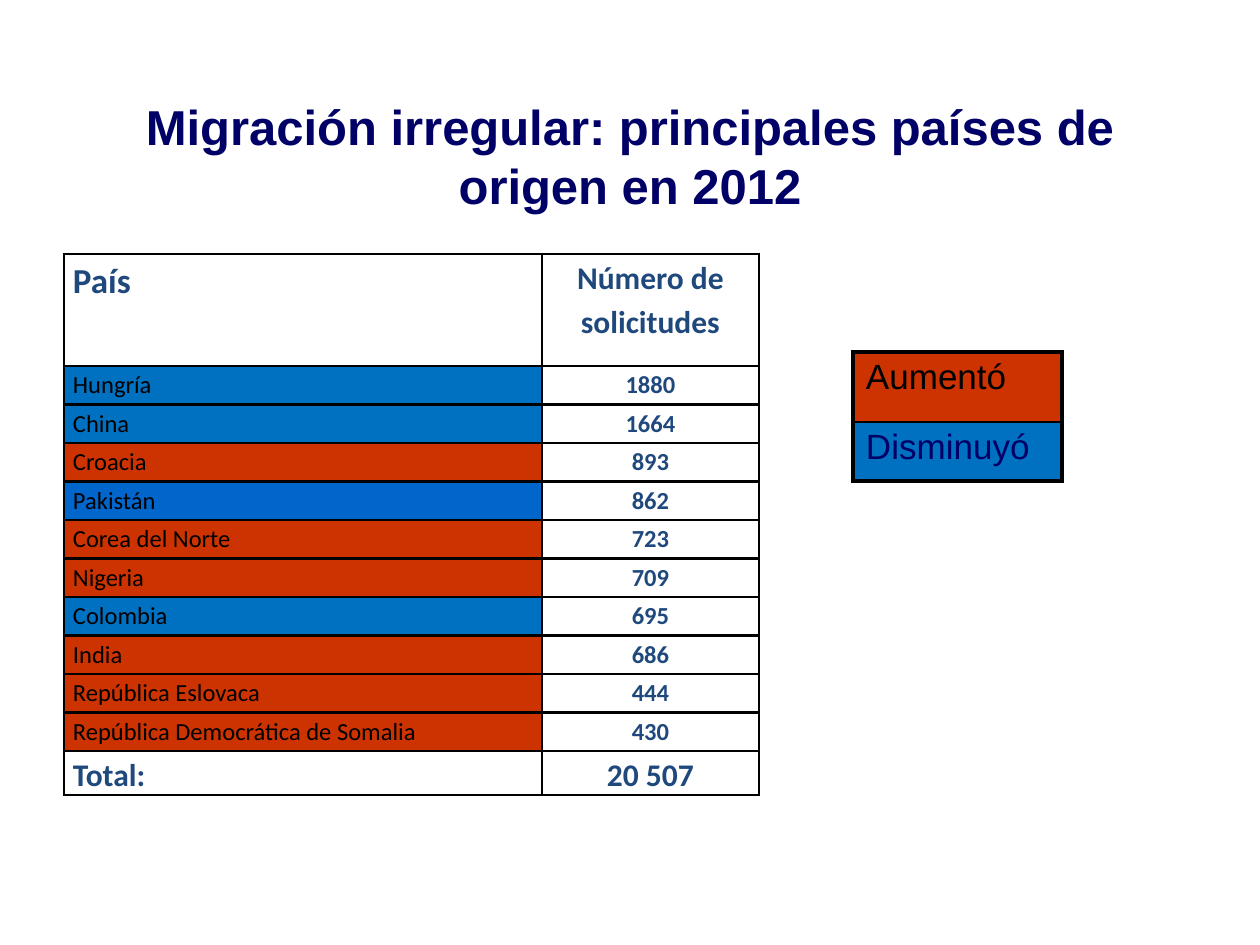
from dataclasses import dataclass

from lxml import etree
from pptx import Presentation
from pptx import util as u
from pptx.dml.color import RGBColor
from pptx.enum import text
from pptx.oxml import ns

PX = u.Inches(1) / 126


def px(length):
    return u.Emu(round(length * PX))


@dataclass(frozen=True)
class Theme:
    heading_font: str = "Arial"
    table_font: str = "Calibri"
    navy: str = "000066"
    slate: str = "1F497D"
    black: str = "000000"
    fell: str = "0070C0"
    fell_alt: str = "0066CC"
    rose: str = "CC3300"
    title_size: int = 28
    large: int = 20
    medium: int = 18
    small: int = 14


@dataclass(frozen=True)
class Cell:
    words: str
    size: int
    color: str
    bold: bool = False
    fill: str | None = None


class SlideBuilder:
    def __init__(self, slide, theme):
        self.slide = slide
        self.theme = theme

    def style(self, para, size, color, font, bold=False, centred=False):
        para.alignment = text.PP_ALIGN.CENTER if centred else text.PP_ALIGN.LEFT
        for span in para.runs:
            span.font.name = font
            span.font.size = u.Pt(size)
            span.font.bold = bold
            span.font.color.rgb = RGBColor.from_string(color)

    def title(self, words, left, top, width, height):
        box = self.slide.shapes.add_textbox(*map(px, (left, top, width, height)))
        frame = box.text_frame
        frame.word_wrap = True
        frame.vertical_anchor = text.MSO_ANCHOR.MIDDLE
        frame.text = words
        self.style(frame.paragraphs[0], self.theme.title_size, self.theme.navy,
                   self.theme.heading_font, bold=True, centred=True)

    def borders(self, cell, widths):
        """Draw the cell edges; widths maps L, R, T and B to points."""
        properties = cell._tc.get_or_add_tcPr()
        for side in "LRTB":
            line = etree.SubElement(properties, ns.qn(f"a:ln{side}"),
                                    w=str(u.Pt(widths[side])))
            paint = etree.SubElement(line, ns.qn("a:solidFill"))
            etree.SubElement(paint, ns.qn("a:srgbClr"), val=self.theme.black)

    def table(self, rows, left, top, widths, heights, font, margins,
              edge, inner, spacing=1.0):
        """Add a table whose columns after the first are centred."""
        frame = self.slide.shapes.add_table(
            len(rows), len(widths),
            *map(px, (left, top, sum(widths), sum(heights))))
        table = frame.table
        table.first_row = table.horz_banding = False
        for column, width in zip(table.columns, widths):
            column.width = px(width)
        for r, (row, height) in enumerate(zip(rows, heights)):
            table.rows[r].height = px(height)
            for c, content in enumerate(row):
                cell = table.cell(r, c)
                cell.margin_left = cell.margin_right = px(margins[0])
                cell.margin_top = cell.margin_bottom = px(margins[1])
                self.borders(cell, {
                    "L": inner if c else edge,
                    "R": edge if c == len(widths) - 1 else inner,
                    "T": inner if r else edge,
                    "B": edge if r == len(rows) - 1 else inner,
                })
                if content.fill:
                    cell.fill.solid()
                    cell.fill.fore_color.rgb = RGBColor.from_string(content.fill)
                else:
                    cell.fill.background()
                cell.text_frame.text = content.words
                para = cell.text_frame.paragraphs[0]
                para.line_spacing = spacing
                self.style(para, content.size, content.color, font,
                           content.bold, centred=c > 0)


def main():
    theme = Theme()
    deck = Presentation()
    deck.slide_width, deck.slide_height = u.Inches(10), u.Inches(7.5)
    page = SlideBuilder(deck.slides.add_slide(deck.slide_layouts[6]), theme)

    page.title("Migración irregular: principales países de origen en 2012",
               63, 115, 1134, 81)

    countries = [
        ("Hungría", "1880", theme.fell),
        ("China", "1664", theme.fell),
        ("Croacia", "893", theme.rose),
        ("Pakistán", "862", theme.fell_alt),
        ("Corea del Norte", "723", theme.rose),
        ("Nigeria", "709", theme.rose),
        ("Colombia", "695", theme.fell),
        ("India", "686", theme.rose),
        ("República Eslovaca", "444", theme.rose),
        ("República Democrática de Somalia", "430", theme.rose),
    ]
    header = [Cell("País", theme.large, theme.slate, True),
              Cell("Número de solicitudes", theme.medium, theme.slate, True)]
    body = [[Cell(country, theme.small, theme.black, fill=fill),
             Cell(requests, theme.small, theme.slate, True)]
            for country, requests, fill in countries]
    total = [Cell(words, theme.medium, theme.slate, True)
             for words in ("Total:", "20 507")]
    body_height = 385
    page.table([header, *body, total], 64, 254, [478, 217],
               [112, *[body_height / len(body)] * len(body), 44],
               theme.table_font, margins=(9, 0), edge=1.5, inner=1.5,
               spacing=1.15)

    legend = [[Cell("Aumentó", theme.large, theme.black, fill=theme.rose)],
              [Cell("Disminuyó", theme.large, theme.navy, fill=theme.fell)]]
    page.table(legend, 853, 352, [209], [70, 59], theme.heading_font,
               margins=(13, 6), edge=2.25, inner=1)

    deck.save("out.pptx")


if __name__ == "__main__":
    main()
